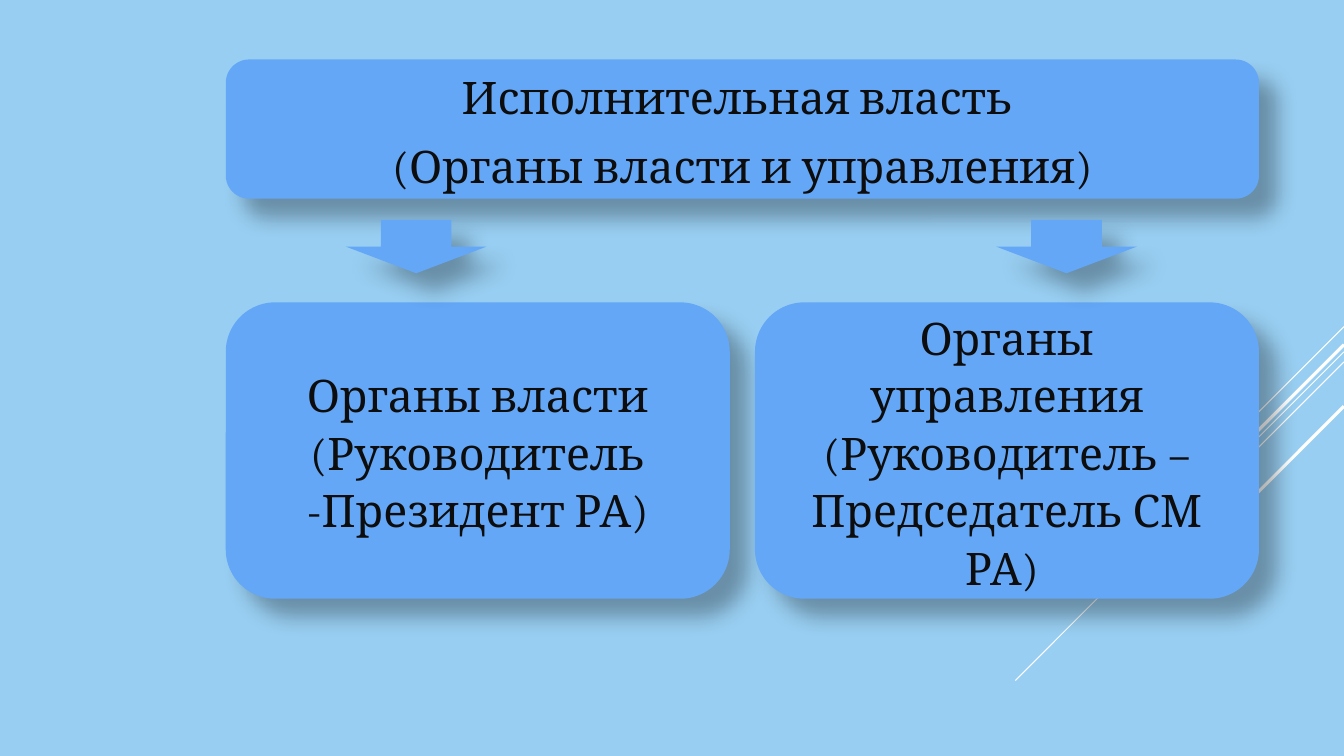
from dataclasses import dataclass

from lxml.etree import SubElement
from pptx import Presentation
from pptx.dml.color import RGBColor
from pptx.enum.shapes import MSO_CONNECTOR, MSO_SHAPE
from pptx.enum.text import MSO_ANCHOR, PP_ALIGN
from pptx.oxml.ns import qn
from pptx.util import Pt


@dataclass(frozen=True)
class Theme:
    background: RGBColor = RGBColor(0x98, 0xCE, 0xF1)
    block: RGBColor = RGBColor(0x64, 0xA7, 0xF7)
    text: RGBColor = RGBColor(0x0D, 0x0D, 0x0D)
    ray: RGBColor = RGBColor(0xFF, 0xFF, 0xFF)
    shadow: str = "000000"
    font: str = "Cambria"
    size: int = 32


HEADER = ["Исполнительная власть ", "(Органы власти и управления)"]
BRANCHES = [
    {"text": "Органы власти (Руководитель -Президент РА)", "arrow_shift": -44},
    {"text": "Органы управления (Руководитель – Председатель СМ РА) ", "arrow_shift": 42.5},
]
RAYS = [
    {"start": 233.3, "run": 72, "weight": 0.75},
    {"start": 251.3, "run": 234.7, "weight": 0.75},
    {"start": 258.5, "run": 149.2, "weight": 0.75},
    {"start": 246.2, "run": 137.5, "weight": 2.25},
    {"start": 290.2, "run": 100.1, "weight": 2.25},
]

THEME = Theme()
PAGE_WIDTH, PAGE_HEIGHT = 960, 540
LEFT, CONTENT_WIDTH, GAP = 161.3, 738, 18
HEADER_TOP, HEADER_HEIGHT = 42.5, 99.4
ARROW_TOP, ARROW_WIDTH, ARROW_HEIGHT = 157, 100.8, 38.2
BRANCH_TOP, BRANCH_HEIGHT = 216, 211.7


def add_ray(page, start, run, weight):
    ray = page.shapes.add_connector(
        MSO_CONNECTOR.STRAIGHT,
        Pt(PAGE_WIDTH), Pt(start), Pt(PAGE_WIDTH - run), Pt(start + run),
    )
    ray.line.color.rgb = THEME.ray
    ray.line.width = Pt(weight)
    SubElement(ray._element.spPr, qn("a:effectLst"))


def add_block(page, kind, left, top, width, height):
    block = page.shapes.add_shape(kind, Pt(left), Pt(top), Pt(width), Pt(height))
    block.fill.solid()
    block.fill.fore_color.rgb = THEME.block
    block.line.fill.background()
    block.shadow.inherit = False
    effects = block._element.spPr.find(qn("a:effectLst"))
    shadow = SubElement(
        effects, qn("a:outerShdw"), blurRad=str(Pt(15)), dist=str(Pt(18)),
        dir="2700000", algn="tl", rotWithShape="0",
    )
    color = SubElement(shadow, qn("a:srgbClr"), val=THEME.shadow)
    SubElement(color, qn("a:alpha"), val="30000")
    return block


def add_text_block(page, lines, left, top, width, height):
    block = add_block(page, MSO_SHAPE.ROUNDED_RECTANGLE, left, top, width, height)
    frame = block.text_frame
    frame.word_wrap = True
    frame.vertical_anchor = MSO_ANCHOR.MIDDLE
    frame.text = "\n".join(lines)
    for para in frame.paragraphs:
        para.alignment = PP_ALIGN.CENTER
        para.line_spacing = 1.07
        para.space_after = Pt(8)
        for span in para.runs:
            span.font.name = THEME.font
            span.font.size = Pt(THEME.size)
            span.font.color.rgb = THEME.text


def main():
    deck = Presentation()
    deck.slide_width, deck.slide_height = Pt(PAGE_WIDTH), Pt(PAGE_HEIGHT)
    page = deck.slides.add_slide(deck.slide_layouts[6])
    page.background.fill.solid()
    page.background.fill.fore_color.rgb = THEME.background

    for ray in RAYS:
        add_ray(page, **ray)

    add_text_block(page, HEADER, LEFT, HEADER_TOP, CONTENT_WIDTH, HEADER_HEIGHT)

    count = len(BRANCHES)
    branch_width = (CONTENT_WIDTH - GAP * (count - 1)) / count
    for index, branch in enumerate(BRANCHES):
        left = LEFT + index * (branch_width + GAP)
        add_text_block(page, [branch["text"]], left, BRANCH_TOP, branch_width, BRANCH_HEIGHT)
        arrow_left = left + (branch_width - ARROW_WIDTH) / 2 + branch["arrow_shift"]
        add_block(page, MSO_SHAPE.DOWN_ARROW, arrow_left, ARROW_TOP, ARROW_WIDTH, ARROW_HEIGHT)

    deck.save("out.pptx")


if __name__ == "__main__":
    main()
